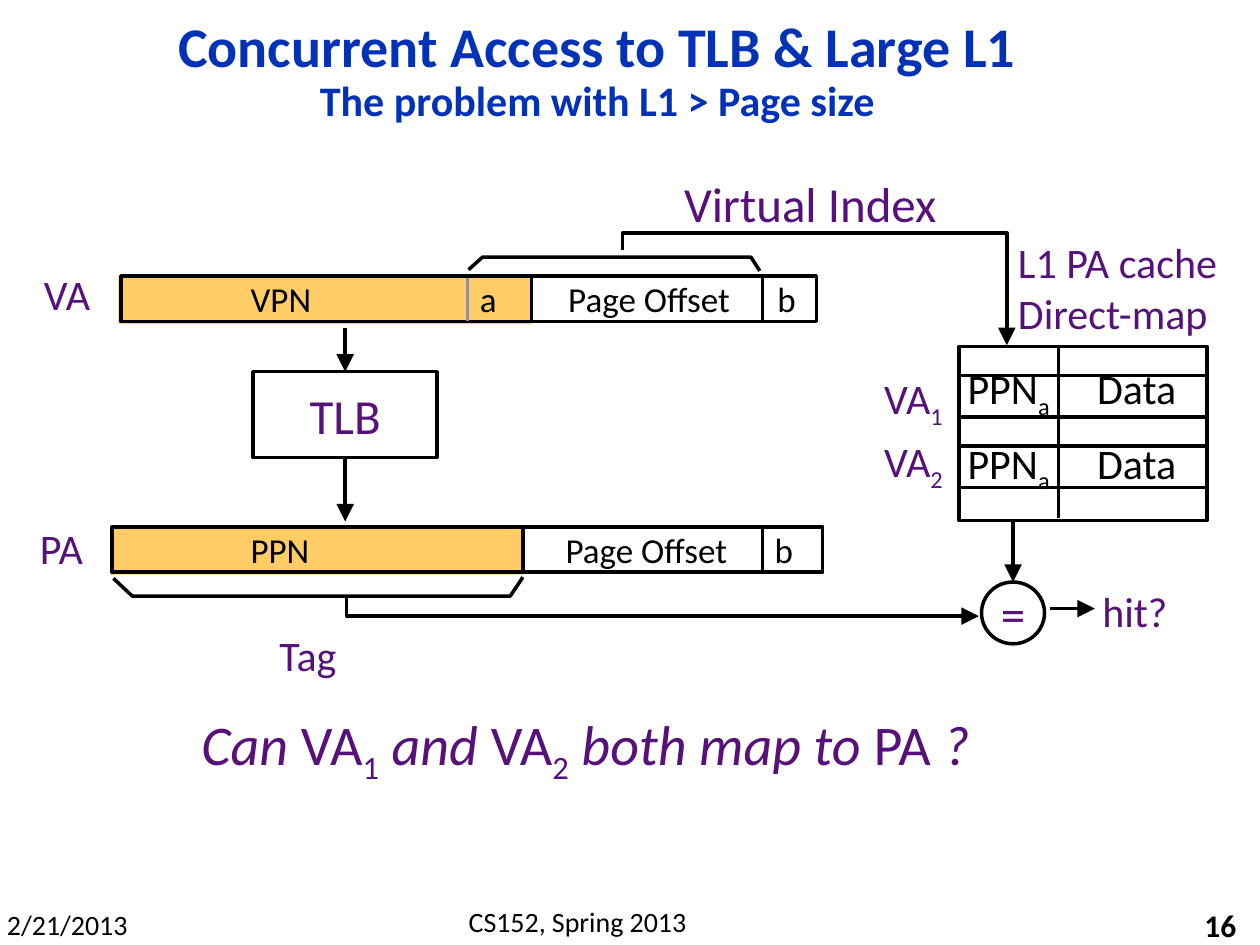
from dataclasses import dataclass, field
from typing import NamedTuple, Optional

from lxml import etree
from pptx import Presentation, util as u
from pptx.dml.color import RGBColor
from pptx.enum import shapes, text
from pptx.oxml import ns

BLACK = RGBColor(0x00, 0x00, 0x00)
WHITE = RGBColor(0xFF, 0xFF, 0xFF)
GREY = RGBColor(0x91, 0x91, 0x91)
BLUE = RGBColor(0x03, 0x32, 0xB7)
PURPLE = RGBColor(0x56, 0x12, 0x7A)
ORANGE = RGBColor(0xFF, 0xCC, 0x66)

LEFT, CENTER, RIGHT = text.PP_ALIGN.LEFT, text.PP_ALIGN.CENTER, text.PP_ALIGN.RIGHT
TOP, MIDDLE = text.MSO_ANCHOR.TOP, text.MSO_ANCHOR.MIDDLE


class Span(NamedTuple):
    text: str
    size: float = 24
    color: RGBColor = PURPLE
    bold: bool = False
    italic: bool = False
    sub: bool = False


class Area(NamedTuple):
    left: float
    top: float
    width: float
    height: float


@dataclass
class Label:
    area: Area
    lines: list[list[Span]]
    align: text.PP_ALIGN = LEFT
    anchor: text.MSO_ANCHOR = TOP
    wrap: bool = False
    line_spacing: Optional[float] = None
    tabs: list[float] = field(default_factory=list)
    side_margin: float = 7.2


@dataclass
class AddressBar:
    """An address whose first fields are tinted; tabs place the field names."""
    frame: Area
    tint: Area
    names: str
    tabs: list[float]
    dividers: list[tuple[float, RGBColor]]


def add_child(parent, tag: str, **attributes: str):
    return etree.SubElement(parent, ns.qn(tag), attributes)


def write(frame, label: Label) -> None:
    formats = {"word_wrap": label.wrap, "vertical_anchor": label.anchor,
               "margin_left": u.Pt(label.side_margin),
               "margin_right": u.Pt(label.side_margin)}
    for key, value in formats.items():
        setattr(frame, key, value)
    for number, spans in enumerate(label.lines):
        para = frame.add_paragraph() if number else frame.paragraphs[0]
        para.alignment = label.align
        para.line_spacing = label.line_spacing
        if label.tabs:
            tab_list = add_child(para._p.get_or_add_pPr(), "a:tabLst")
            for stop in label.tabs:
                add_child(tab_list, "a:tab", pos=str(int(u.Pt(stop))), algn="l")
        for item in spans:
            span = para.add_run()
            span.text = item.text
            formats = {"name": "Calibri", "size": u.Pt(item.size),
                       "bold": item.bold, "italic": item.italic}
            for key, value in formats.items():
                setattr(span.font, key, value)
            span.font.color.rgb = item.color
            if item.sub:
                span._r.get_or_add_rPr().set("baseline", "-25000")


def draw_label(page, label: Label) -> None:
    box = page.shapes.add_textbox(*map(u.Pt, label.area))
    write(box.text_frame, label)


def style_line(shape, color: RGBColor = BLACK, arrow: bool = False) -> None:
    shape.line.color.rgb = color
    shape.line.width = u.Pt(2)
    if arrow:
        add_child(shape.line._get_or_add_ln(), "a:tailEnd",
                  type="triangle", w="lg", len="lg")


def draw_shape(page, area: Area, fill: Optional[RGBColor] = None, outlined: bool = True,
               kind=shapes.MSO_SHAPE.RECTANGLE, label: Optional[Label] = None):
    shape = page.shapes.add_shape(kind, *map(u.Pt, area))
    shape.shadow.inherit = False
    if fill is None:
        shape.fill.background()
    else:
        shape.fill.solid()
        shape.fill.fore_color.rgb = fill
    if outlined:
        style_line(shape)
    else:
        shape.line.fill.background()
    if label:
        write(shape.text_frame, label)
    return shape


def draw_line(page, x1: float, y1: float, x2: float, y2: float,
              color: RGBColor = BLACK, arrow: bool = False):
    line = page.shapes.add_connector(shapes.MSO_CONNECTOR.STRAIGHT,
                                     *map(u.Pt, (x1, y1, x2, y2)))
    style_line(line, color, arrow)
    add_child(line._element.spPr, "a:effectLst")
    return line


def draw_path(page, points: list[tuple[float, float]], arrow: bool = False) -> None:
    start, *rest = [(u.Pt(x), u.Pt(y)) for x, y in points]
    builder = page.shapes.build_freeform(*start)
    builder.add_line_segments(rest, close=False)
    shape = builder.convert_to_shape()
    shape.shadow.inherit = False
    shape.fill.background()
    style_line(shape, arrow=arrow)


def draw_address(page, bar: AddressBar) -> None:
    draw_shape(page, bar.tint, ORANGE, outlined=False)
    names = Label(bar.frame, [[Span(bar.names, 20, BLACK)]], anchor=MIDDLE,
                  wrap=True, tabs=bar.tabs)
    draw_shape(page, bar.frame, label=names)
    top = bar.frame.top
    for x, color in bar.dividers:
        draw_line(page, x, top + 1, x, top + bar.frame.height, color)


def draw_cache(page) -> None:
    cache = Area(547.9, 198, 141.8, 99.4)
    draw_shape(page, cache)
    draw_line(page, 604.8, 198, 604.8, 296)
    rows = [(214.5, 203.8, 209.5), (254.8, 246.2, 245.5)]
    for number, (row_top, text_top, name_top) in enumerate(rows, 1):
        for y in (row_top, row_top + 23.8):
            draw_line(page, 548.6, y, 691, y)
        draw_label(page, Label(Area(545.8, text_top, 136.8, 36.7),
                               [[Span("PPN", color=BLACK), Span("a", color=BLACK, sub=True),
                                 Span("\tData", color=BLACK)]], wrap=True, tabs=[74]))
        draw_label(page, Label(Area(498.2, name_top, 50.4, 36),
                               [[Span("VA"), Span(str(number), sub=True)]]))


QUESTION = [Span("Can", 32, italic=True), Span(" VA", 32), Span("1", 32, sub=True),
            Span(" and", 32, italic=True), Span(" VA", 32), Span("2", 32, sub=True),
            Span(" both map to", 32, italic=True), Span(" PA ", 32),
            Span("?", 32, italic=True)]

LABELS = [
    Label(Area(0, 514.8, 77, 26.6), [[Span("2/21/2013", 16, BLACK)]], CENTER, side_margin=0),
    Label(Area(210.2, 513.4, 239.8, 26.6), [[Span("CS152, Spring 2013", 16, BLACK)]],
          CENTER, wrap=True),
    Label(Area(563.8, 517, 149.8, 23), [[Span("16", 18, BLACK, bold=True)]], RIGHT, MIDDLE),
    Label(Area(54, 12.2, 574.6, 58.3),
          [[Span("Concurrent Access to TLB & Large L1", 32, BLUE, bold=True)],
           [Span("The problem with L1 > Page size", 24, BLUE, bold=True)]],
          CENTER, MIDDLE, True, 0.9),
    Label(Area(108, 401.8, 475.2, 46), [QUESTION]),
    Label(Area(152.6, 356.4, 49, 36), [[Span("Tag")]]),
    Label(Area(18, 149.8, 42.5, 36), [[Span("VA")]]),
    Label(Area(15.8, 295.2, 41, 36), [[Span("PA")]]),
    Label(Area(383.8, 95.8, 160.6, 41), [[Span("Virtual Index", 28)]]),
    Label(Area(574.6, 131.8, 131, 65.5), [[Span("L1 PA cache")], [Span("Direct-map")]]),
    Label(Area(622.8, 331.2, 51.8, 36), [[Span("hit?")]]),
]

ADDRESSES = [
    AddressBar(Area(69.1, 157.7, 397.4, 26), Area(67.7, 157.7, 236.2, 27.4),
               "\tVPN\ta\tPage Offset\tb", [67, 198, 248.5, 368],
               [(267.1, GREY), (303.8, BLACK), (435.6, BLACK)]),
    AddressBar(Area(64.1, 301, 406.1, 26), Area(63.4, 301, 236.2, 27.4),
               "\tPPN\tPage Offset\tb", [72, 252, 371.5],
               [(298.8, BLACK), (435.6, BLACK)]),
]

BRACES = [
    [(267.8, 154.1), (275.8, 146.9), (429.1, 146.9), (434.2, 154.8)],
    [(64.8, 330.5), (75.6, 340.6), (291.6, 340.6), (298.8, 329.8)],
]
ROUTES = [
    [(355.7, 142.6), (355.7, 133.2), (575.3, 133.2), (575.3, 197.3)],
    [(198, 342), (198, 352.1), (559.4, 352.1)],
]


def main() -> None:
    deck = Presentation()
    deck.slide_width, deck.slide_height = u.Pt(720), u.Pt(540)
    page = deck.slides.add_slide(deck.slide_layouts[6])

    for label in LABELS:
        draw_label(page, label)
    for bar in ADDRESSES:
        draw_address(page, bar)
    for brace in BRACES:
        draw_path(page, brace)
    for route in ROUTES:
        draw_path(page, route, arrow=True)
    draw_cache(page)

    tlb_area = Area(144.7, 212.4, 105.1, 49)
    tlb = draw_shape(page, tlb_area,
                     label=Label(tlb_area, [[Span("TLB", 28)]], CENTER, MIDDLE))
    equal_area = Area(560.9, 332.6, 36, 35.3)
    equal = draw_shape(page, equal_area, WHITE, kind=shapes.MSO_SHAPE.OVAL,
                       label=Label(equal_area, [[Span("=", 28)]], CENTER, MIDDLE))

    draw_line(page, 197.25, 187.2, 197.25, 212.4, arrow=True).end_connect(tlb, 0)
    draw_line(page, 197.25, 261.4, 197.25, 298, arrow=True).begin_connect(tlb, 2)
    draw_line(page, 578.9, 298, 578.9, 332.6, arrow=True).end_connect(equal, 0)
    draw_line(page, 599.8, 347.8, 625.7, 347.8, arrow=True)

    deck.save("out.pptx")


if __name__ == "__main__":
    main()
